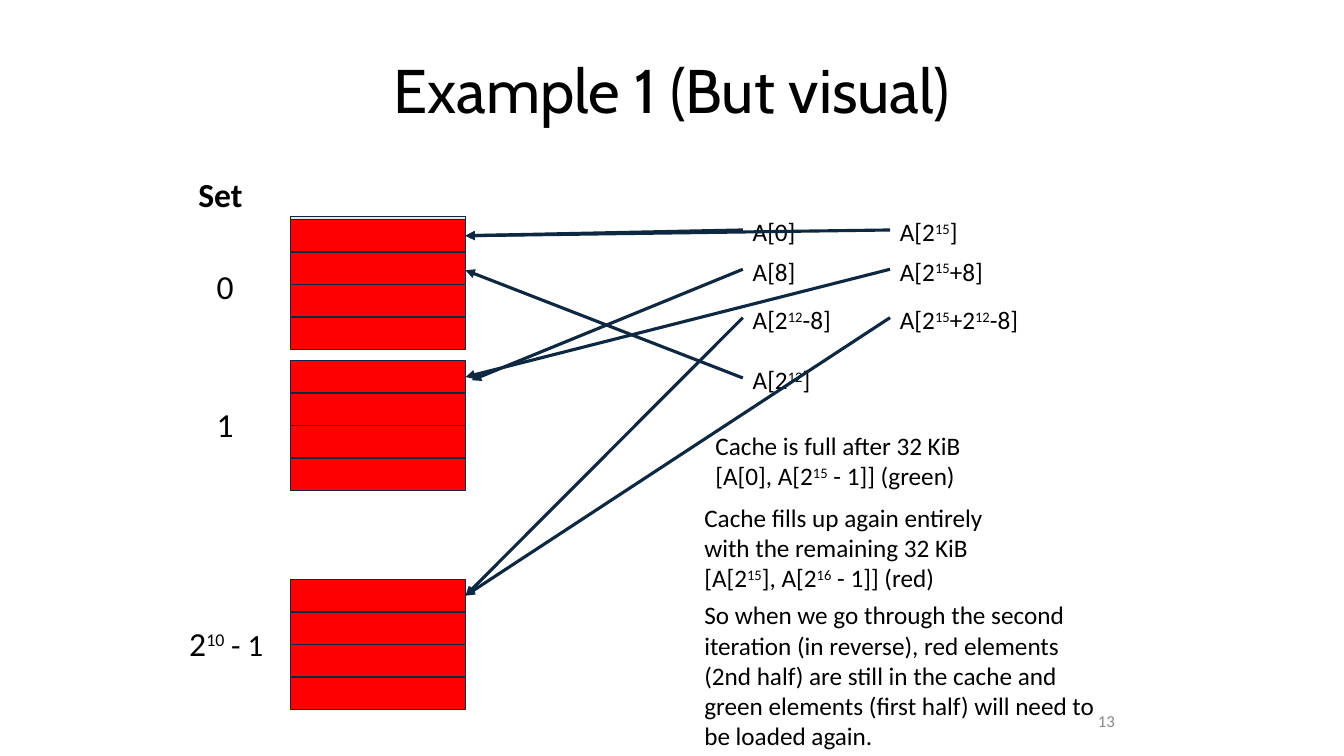
from dataclasses import dataclass

from lxml import etree
from pptx import Presentation
from pptx import util as u
from pptx.dml.color import RGBColor
from pptx.enum import shapes, text
from pptx.oxml import ns

COLORS = {
    "ink": "000000",
    "navy": "0E2841",
    "red": "FF0000",
    "grey": "E8E8E8",
    "pale": "888888",
}
FONT = "Calibri"
INSET = 0.25
ROW_LEFT, ROW_WIDTH, ROW_HEIGHT = 7.32, 4.42, 0.81
ROW_STEP = 0.82
ROW_COUNT = 4
CELL_HEIGHT = 1.17
LEFT, RIGHT = 18.72, 22.43
EDGE = 11.73


@dataclass
class Label:
    words: str
    left: float
    top: float
    width: float
    height: float
    size: int = 18
    rest: int | None = None
    bold: bool = False
    color: str = "ink"
    align: text.PP_ALIGN = text.PP_ALIGN.LEFT
    anchor: text.MSO_ANCHOR = text.MSO_ANCHOR.TOP
    pad: float = INSET


@dataclass
class Row:
    top: float
    color: str = "red"
    height: float = ROW_HEIGHT


@dataclass
class Access:
    words: str
    left: float
    top: float
    width: float
    target: tuple[float, float]


LABELS = [
    Label("Set", 4.75, 4.14, 1.91, 0.81, 24, bold=True),
    Label("0", 5.21, 6.45, 0.99, 1.35, 24),
    Label("1", 5.21, 9.93, 0.99, 1.35, 24),
    Label("2^10^ - 1", 4.52, 15.44, 2.54, 1.35, 24, rest=22),
    Label("Cache is full after 32 KiB\n[A[0], A[2^15^ - 1]] (green)",
          17.78, 10.59, 10.59, 1.35),
    Label("Cache fills up again entirely with the remaining 32 KiB "
          "[A[2^15^], A[2^16^ - 1]] (red)", 17.5, 12.4, 7.77, 2.72),
    Label("So when we go through the second iteration (in reverse), "
          "red elements (2nd half) are still in the cache and green "
          "elements (first half) will need to be loaded again.",
          17.5, 14.86, 10.59, 2.92),
    Label("13", 22.43, 17.65, 5.92, 1.02, 12, color="pale",
          align=text.PP_ALIGN.RIGHT, anchor=text.MSO_ANCHOR.MIDDLE, pad=0.13),
]

ROWS = [Row(5.46, "grey", 0.08)]
ROWS += [Row(top + ROW_STEP * i)
         for top in (5.54, 9.09, 14.61) for i in range(ROW_COUNT)]

ACCESSES = [
    Access("A[0]", LEFT, 5.21, 1.63, (EDGE, 5.94)),
    Access("A[8]", LEFT, 6.2, 1.63, (11.89, 9.58)),
    Access("A[2^12^-8]", LEFT, 7.42, 2.54, (EDGE, 15.01)),
    Access("A[2^12^]", LEFT, 8.94, 2.36, (EDGE, 6.81)),
    Access("A[2^15^]", RIGHT, 5.21, 2.08, (EDGE, 5.94)),
    Access("A[2^15^+8]", RIGHT, 6.2, 2.82, (EDGE, 9.5)),
    Access("A[2^15^+2^12^-8]", RIGHT, 7.42, 3.63, (EDGE, 15.01)),
]


def tint(name: str) -> RGBColor:
    return RGBColor.from_string(COLORS[name])


def pad_frame(frame, side: float, end: float) -> None:
    frame.word_wrap = True
    frame.auto_size = text.MSO_AUTO_SIZE.NONE
    frame.margin_left = frame.margin_right = u.Cm(side)
    frame.margin_top = frame.margin_bottom = u.Cm(end)


def add_title(slide, words: str) -> None:
    title = slide.shapes.title
    title.left, title.top = u.Cm(5.51), u.Cm(0.76)
    title.width, title.height = u.Cm(22.86), u.Cm(3.18)
    frame = title.text_frame
    pad_frame(frame, INSET, INSET)
    frame.vertical_anchor = text.MSO_ANCHOR.MIDDLE
    frame.text = words
    line = frame.paragraphs[0]
    line.alignment = text.PP_ALIGN.CENTER
    line.line_spacing = 0.9
    line.font.name, line.font.size = "Cabin", u.Pt(44)
    line.font.color.rgb = tint("ink")


def add_label(slide, label: Label) -> None:
    box = slide.shapes.add_textbox(u.Cm(label.left), u.Cm(label.top),
                                   u.Cm(label.width), u.Cm(label.height))
    frame = box.text_frame
    pad_frame(frame, INSET, label.pad)
    frame.vertical_anchor = label.anchor
    for i, words in enumerate(label.words.split("\n")):
        line = frame.add_paragraph() if i else frame.paragraphs[0]
        line.alignment = label.align
        line.font.name, line.font.size = FONT, u.Pt(label.size)
        line.font.bold = label.bold
        line.font.color.rgb = tint(label.color)
        for j, part in enumerate(words.split("^")):
            run = line.add_run()
            run.text = part
            if j and label.rest:
                run.font.size = u.Pt(label.rest)
            if j % 2:
                run.font._element.set("baseline", "30000")


def add_row(slide, row: Row) -> None:
    rect = slide.shapes.add_shape(
        shapes.MSO_SHAPE.RECTANGLE, u.Cm(ROW_LEFT), u.Cm(row.top),
        u.Cm(ROW_WIDTH), u.Cm(row.height))
    rect.shadow.inherit = False
    rect.fill.solid()
    rect.fill.fore_color.rgb = tint(row.color)
    rect.line.color.rgb = tint("navy")
    rect.line.width = u.Pt(0.75)


def add_arrow(slide, access: Access) -> None:
    x, y = access.target
    arrow = slide.shapes.add_connector(
        shapes.MSO_CONNECTOR.STRAIGHT, u.Cm(access.left),
        u.Cm(access.top + CELL_HEIGHT / 2), u.Cm(x), u.Cm(y))
    arrow.line.color.rgb = tint("navy")
    arrow.line.width = u.Pt(2.25)
    etree.SubElement(arrow.line._get_or_add_ln(), ns.qn("a:tailEnd"),
                     type="triangle")
    etree.SubElement(arrow._element.spPr, ns.qn("a:effectLst"))


def main() -> None:
    deck = Presentation()
    deck.slide_width, deck.slide_height = u.Cm(33.87), u.Cm(19.05)
    slide = deck.slides.add_slide(deck.slide_layouts[5])
    add_title(slide, "Example 1 (But visual)")
    for row in ROWS:
        add_row(slide, row)
    for label in LABELS:
        add_label(slide, label)
    for access in ACCESSES:
        add_label(slide, Label(access.words, access.left, access.top,
                               access.width, CELL_HEIGHT))
        add_arrow(slide, access)
    deck.save("out.pptx")


if __name__ == "__main__":
    main()
